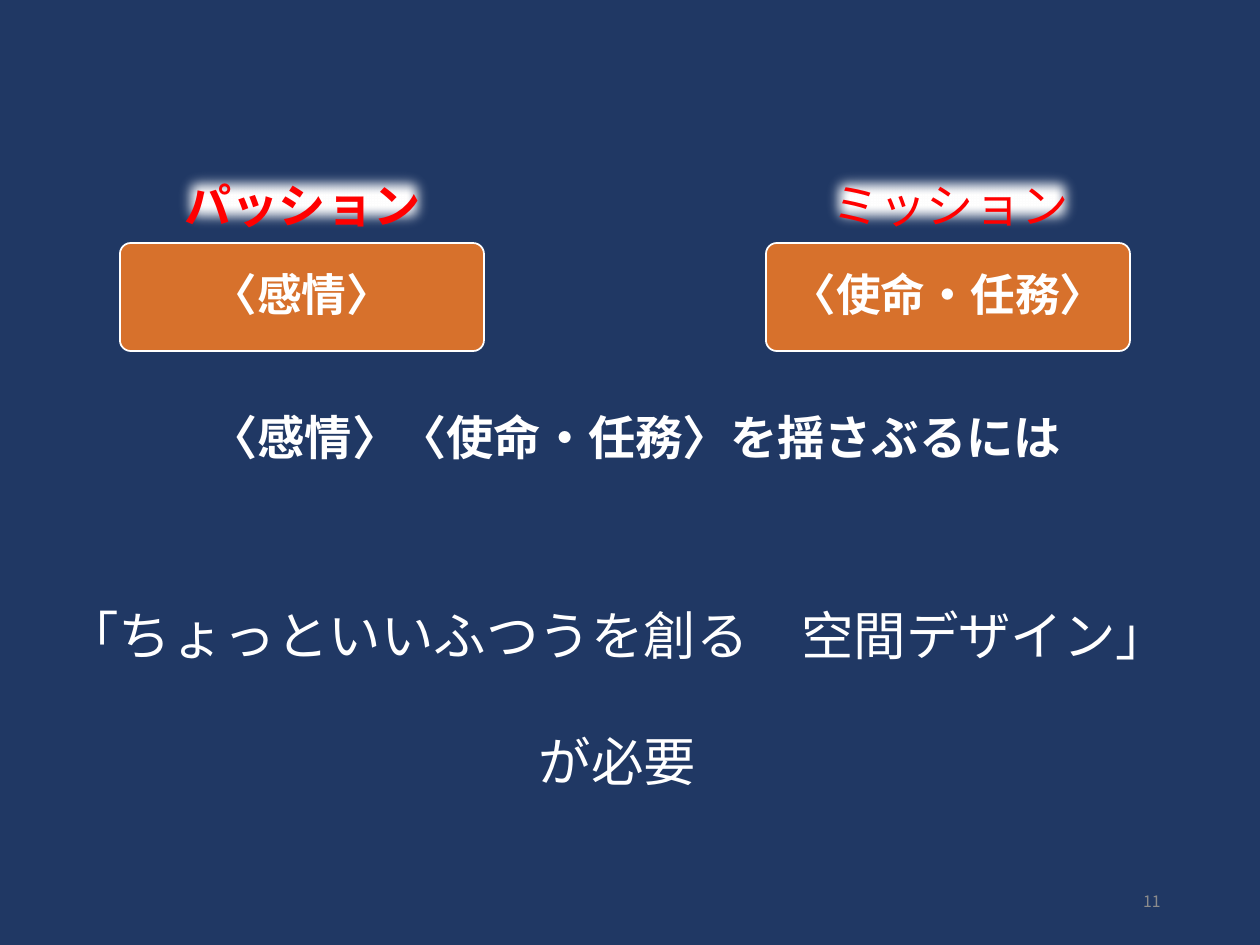
from lxml import etree
from pptx import Presentation
from pptx.dml.color import RGBColor
from pptx.enum.shapes import MSO_SHAPE
from pptx.enum.text import MSO_ANCHOR, PP_ALIGN
from pptx.oxml.ns import qn
from pptx.util import Emu, Pt

LEFT, MID, RIGHT = PP_ALIGN.LEFT, PP_ALIGN.CENTER, PP_ALIGN.RIGHT
CENTER = MSO_ANCHOR.MIDDLE
ROUND = MSO_SHAPE.ROUNDED_RECTANGLE
FONT = "Noto Sans CJK JP"
COLORS = {
    "navy": "203864",
    "orange": "D7712C",
    "white": "FFFFFF",
    "red": "FF0000",
    "gray": "8C8C8C",
}


def px(n):
    return Emu(round(n * 914400 / 126))


def color(name):
    return RGBColor.from_string(COLORS[name])


def paint(fill, name):
    fill.solid()
    fill.fore_color.rgb = color(name)


def style(para, size, name, bold=False, align=LEFT):
    para.alignment = align
    font = para.font
    font.size, font.bold, font.name = Pt(size), bold, FONT
    font.color.rgb = color(name)
    props = para._p.pPr.find(qn("a:defRPr"))
    etree.SubElement(props, qn("a:ea"), typeface=FONT)


def add_text(slide, box, lines, size, name, bold=False, align=LEFT):
    shape = slide.shapes.add_textbox(*map(px, box))
    frame = shape.text_frame
    frame.word_wrap = False
    frame.margin_top = Pt(3.6 + size / 10)
    frame.text = "\n".join(lines)
    for i, para in enumerate(frame.paragraphs):
        style(para, size, name, bold, align)
        para.line_spacing = Pt(size * 1.2)
        if i:
            para.space_before = Pt(size * 1.2)
    return shape


def add_label(slide, left, text, bold):
    shape = add_text(slide, (left, 165, 265, 71), [text], 27, "red", bold)
    paint(shape.fill, "white")
    effects = etree.SubElement(shape._element.spPr, qn("a:effectLst"))
    etree.SubElement(effects, qn("a:softEdge"), rad="112500")


def add_card(slide, left, text):
    shape = slide.shapes.add_shape(ROUND, *map(px, (left, 243, 364, 108)))
    shape.adjustments[0] = 0.1
    shape.shadow.inherit = False
    paint(shape.fill, "orange")
    shape.line.color.rgb = color("white")
    shape.line.width = Pt(1)
    frame = shape.text_frame
    frame.word_wrap = True
    frame.vertical_anchor = CENTER
    frame.text = text
    para = frame.paragraphs[0]
    style(para, 25.5, "white", True, MID)
    para.line_spacing = 0.9


def add_number(slide, text):
    shape = slide.shapes.add_textbox(*map(px, (890, 876, 283, 50)))
    frame = shape.text_frame
    frame.word_wrap = True
    frame.vertical_anchor = CENTER
    frame.text = text
    style(frame.paragraphs[0], 9, "gray", align=RIGHT)


def main():
    deck = Presentation()
    deck.slide_width, deck.slide_height = px(1260), px(945)
    slide = deck.slides.add_slide(deck.slide_layouts[6])
    paint(slide.background.fill, "navy")

    add_label(slide, 172, "パッション", True)
    add_label(slide, 820, "ミッション", False)
    add_card(slide, 766, "〈使命・任務〉")
    add_card(slide, 120, "〈感情〉")
    add_text(slide, (198, 397, 888, 71),
             ["〈感情〉〈使命・任務〉を揺さぶるには"], 27, "white", True)
    add_text(slide, (48, 591, 1139, 204),
             ["「ちょっといいふつうを創る　空間デザイン」", "が必要"],
             30, "white", align=MID)
    add_number(slide, "11")
    deck.save("out.pptx")


if __name__ == "__main__":
    main()
